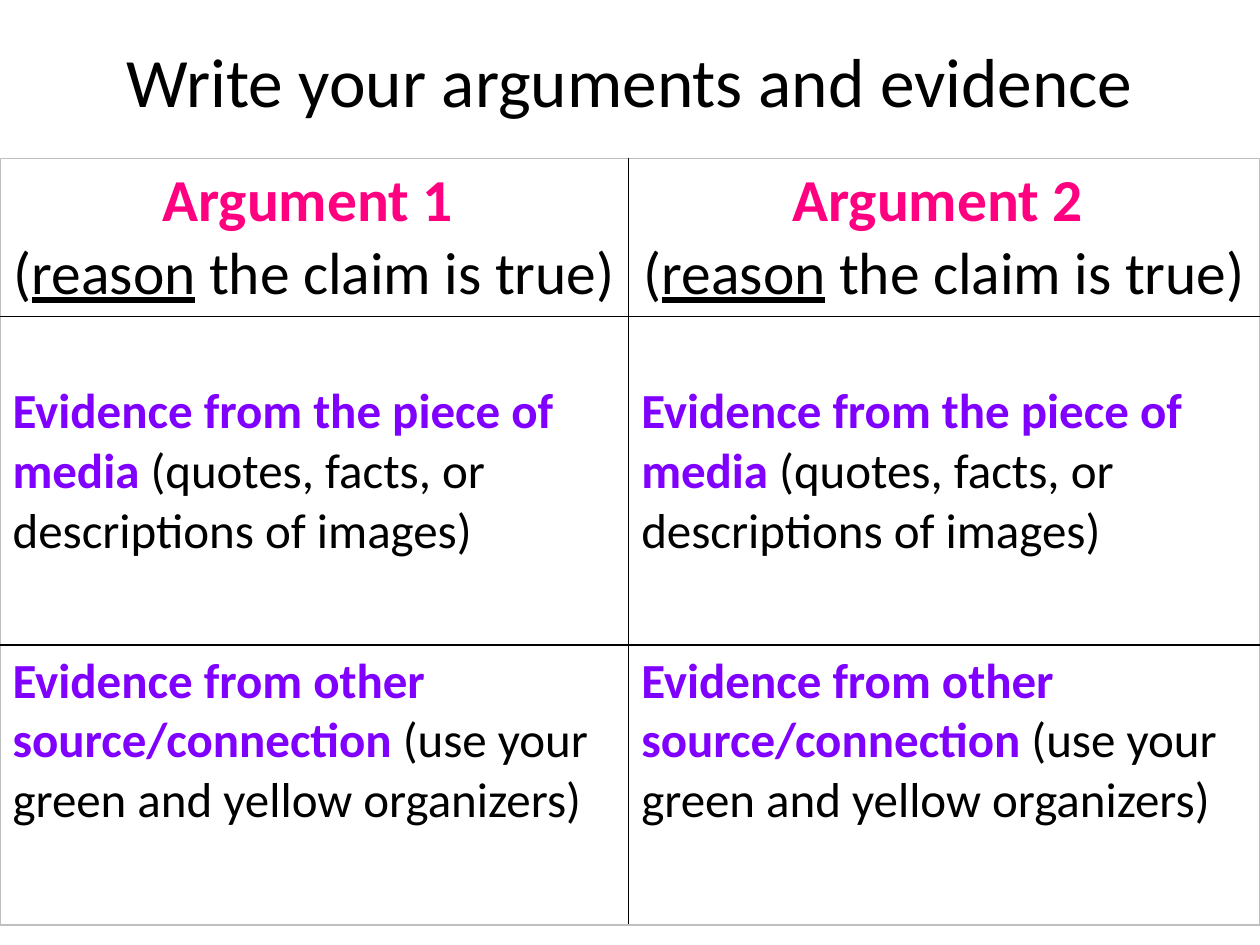
"""Build a two-column organizer for arguments and their evidence."""
import dataclasses

import lxml.etree
import pptx
import pptx.dml.color
import pptx.enum.text
import pptx.oxml.ns
import pptx.util


@dataclasses.dataclass(frozen=True)
class Theme:
    font: str = "Calibri"
    text: str = "000000"
    argument: str = "FF0080"
    evidence: str = "8000FF"
    inner_border: str = "000000"
    outer_border: str = "BFBFBF"
    title_size: float = 39.6
    header_size: float = 34
    body_size: float = 28


THEME = Theme()
TITLE = "Write your arguments and evidence"
ARGUMENTS = ["Argument 1 ", "Argument 2 "]
REASON = [("(", False), ("reason", True), (" the claim is true)", False)]
EVIDENCE = [
    ("Evidence from the piece of media ", "(quotes, facts, or descriptions of images)"),
    ("Evidence from other source/connection ", "(use your green and yellow organizers)"),
]
SLIDE_SIZE = (10, 7.5)
TITLE_BOX = (0.5, 0.01, 9, 1.25)
TABLE_TOP = 1.26
COLUMN_WIDTHS = [4.99, 5.01]
ROW_HEIGHTS = [1.25, 2.61, 2.22]
EVIDENCE_TOP_MARGINS = [0.52, 0.05]


def inches(values):
    return [pptx.util.Inches(value) for value in values]


def format_paragraph(paragraph, size, centered=False):
    paragraph.font.name = THEME.font
    paragraph.font.size = pptx.util.Pt(size)
    paragraph.alignment = (
        pptx.enum.text.PP_ALIGN.CENTER if centered else pptx.enum.text.PP_ALIGN.LEFT
    )


def add_run(paragraph, text, color=THEME.text, bold=False, underline=False):
    run = paragraph.add_run()
    run.text = text
    run.font.bold = bold
    run.font.underline = underline
    run.font.color.rgb = pptx.dml.color.RGBColor.from_string(color)


def set_borders(cell, row, column):
    outer_edges = {
        "lnL": column == 0,
        "lnR": column == len(COLUMN_WIDTHS) - 1,
        "lnT": row == 0,
        "lnB": row == len(ROW_HEIGHTS) - 1,
    }
    properties = cell._tc.get_or_add_tcPr()
    for position, (edge, is_outer) in enumerate(outer_edges.items()):
        line = lxml.etree.Element(pptx.oxml.ns.qn(f"a:{edge}"), w=str(pptx.util.Pt(1)))
        fill = lxml.etree.SubElement(line, pptx.oxml.ns.qn("a:solidFill"))
        color = THEME.outer_border if is_outer else THEME.inner_border
        lxml.etree.SubElement(fill, pptx.oxml.ns.qn("a:srgbClr"), val=color)
        properties.insert(position, line)


def fill_header(cell, argument):
    heading = cell.text_frame.paragraphs[0]
    reason = cell.text_frame.add_paragraph()
    for paragraph in (heading, reason):
        format_paragraph(paragraph, THEME.header_size, centered=True)
    add_run(heading, argument, THEME.argument, bold=True)
    for text, underline in REASON:
        add_run(reason, text, underline=underline)


def fill_evidence(cell, label, hint, top_margin):
    cell.margin_top = pptx.util.Inches(top_margin)
    paragraph = cell.text_frame.paragraphs[0]
    format_paragraph(paragraph, THEME.body_size)
    add_run(paragraph, label, THEME.evidence, bold=True)
    add_run(paragraph, hint)


def add_title(slide):
    title = slide.shapes.title
    title.left, title.top, title.width, title.height = inches(TITLE_BOX)
    title.text_frame.vertical_anchor = pptx.enum.text.MSO_ANCHOR.MIDDLE
    paragraph = title.text_frame.paragraphs[0]
    format_paragraph(paragraph, THEME.title_size, centered=True)
    add_run(paragraph, TITLE)


def add_organizer(slide):
    box = inches((0, TABLE_TOP, sum(COLUMN_WIDTHS), sum(ROW_HEIGHTS)))
    table = slide.shapes.add_table(len(ROW_HEIGHTS), len(COLUMN_WIDTHS), *box).table
    table.first_row = table.horz_banding = False
    for column, width in zip(table.columns, inches(COLUMN_WIDTHS)):
        column.width = width
    for row, height in zip(table.rows, inches(ROW_HEIGHTS)):
        row.height = height
    for column, argument in enumerate(ARGUMENTS):
        fill_header(table.cell(0, column), argument)
        for row, (content, margin) in enumerate(zip(EVIDENCE, EVIDENCE_TOP_MARGINS), 1):
            fill_evidence(table.cell(row, column), *content, margin)
        for row in range(len(ROW_HEIGHTS)):
            cell = table.cell(row, column)
            cell.fill.background()
            set_borders(cell, row, column)


def main():
    presentation = pptx.Presentation()
    presentation.slide_width, presentation.slide_height = inches(SLIDE_SIZE)
    slide = presentation.slides.add_slide(presentation.slide_layouts[5])
    add_title(slide)
    add_organizer(slide)
    presentation.save("out.pptx")


if __name__ == "__main__":
    main()
